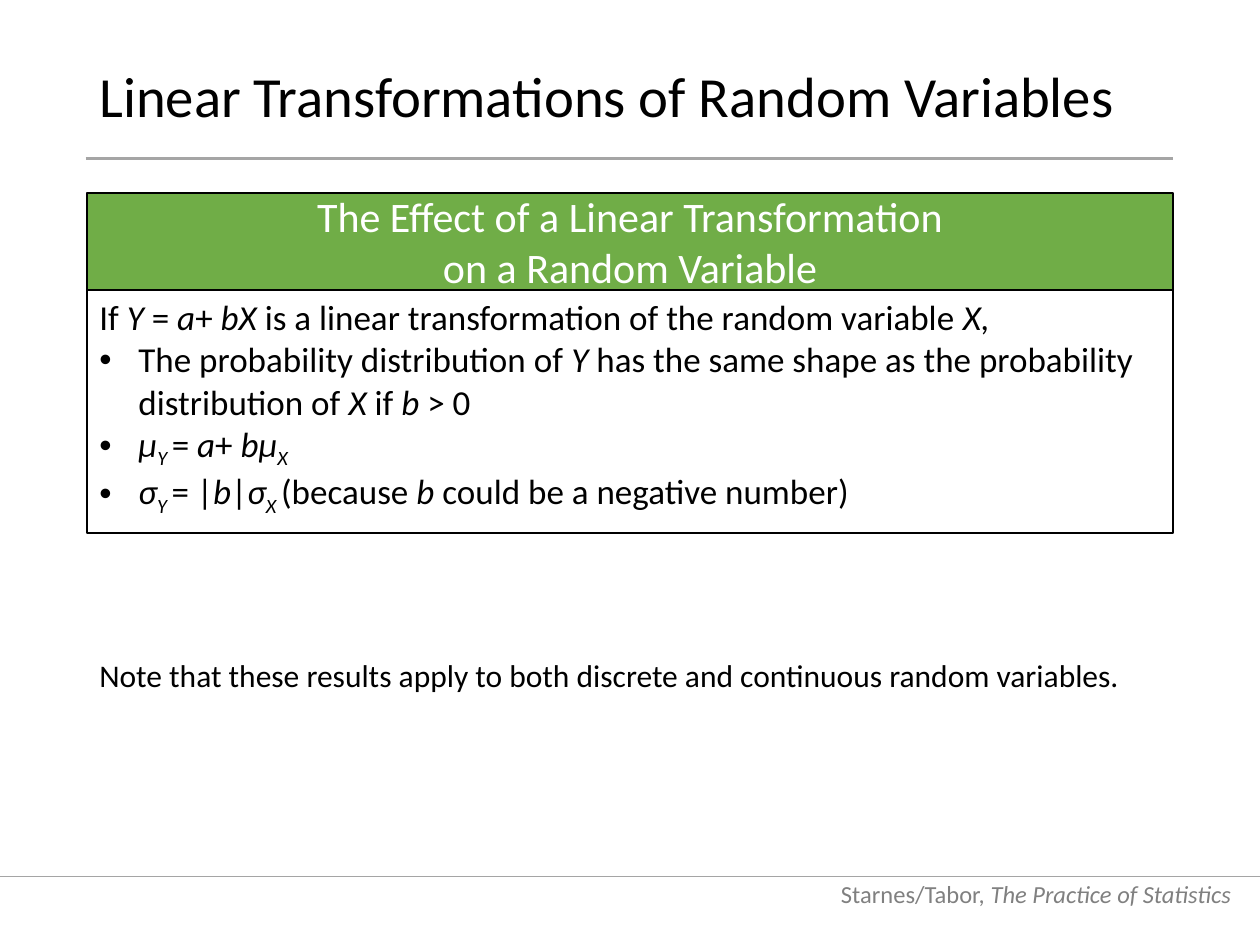
from lxml import etree
from pptx import Presentation
from pptx.dml.color import RGBColor
from pptx.enum.shapes import MSO_CONNECTOR as Connector, MSO_SHAPE as Shape
from pptx.enum.text import MSO_ANCHOR as Anchor, PP_ALIGN as Align
from pptx.oxml.ns import qn
from pptx.util import Inches, Pt

LEFT, WIDTH = 0.69, 8.62
BLACK, WHITE, GREEN, GRAY, RULE = "000000", "FFFFFF", "70AD47", "808080", "A5A5A5"
BULLET_INDENT = 0.31

ROMAN = {"italic": False}
ITALIC = {"italic": True}
SUBSCRIPT = {"italic": True, "baseline": -25000}

THEOREM_HEADING = [
    [("The Effect of a Linear Transformation", ROMAN)],
    [("on a Random Variable", ROMAN)],
]
PREMISE = [
    ("If ", ROMAN), ("Y ", ITALIC), ("= ", ROMAN), ("a", ITALIC), ("+ ", ROMAN),
    ("bX ", ITALIC), ("is a linear transformation of the random variable ", ROMAN),
    ("X,", ITALIC),
]
CONCLUSIONS = [
    [("The probability distribution of ", ROMAN), ("Y ", ITALIC),
     ("has the same shape as the probability distribution of ", ROMAN),
     ("X ", ITALIC), ("if ", ROMAN), ("b ", ITALIC), ("> 0", ROMAN)],
    [("μ", ITALIC), ("Y ", SUBSCRIPT), ("= ", ROMAN), ("a", ITALIC), ("+ ", ROMAN),
     ("bμ", ITALIC), ("X", SUBSCRIPT)],
    [("σ", ITALIC), ("Y ", SUBSCRIPT), ("= |", ROMAN), ("b", ITALIC), ("|", ROMAN),
     ("σ", ITALIC), ("X ", SUBSCRIPT), ("(because ", ROMAN), ("b ", ITALIC),
     ("could be a negative number)", ROMAN)],
]


def rgb(color):
    """Turn a hex string into a colour."""
    return RGBColor.from_string(color)


def add_bullet(paragraph):
    """Give a paragraph a hanging bullet."""
    properties = paragraph._p.get_or_add_pPr()
    indent = Inches(BULLET_INDENT)
    for name, value in {"marL": indent, "indent": -indent}.items():
        properties.set(name, str(value))
    font = etree.SubElement(properties, qn("a:buFont"))
    font.set("typeface", "Arial")
    etree.SubElement(properties, qn("a:buChar")).set("char", "•")


def write(frame, paragraphs, size, color, anchor=Anchor.TOP, align=Align.LEFT,
          spacing=None, bullets_from=None):
    """Fill a text frame with paragraphs of styled runs."""
    for name, value in {"word_wrap": True, "vertical_anchor": anchor}.items():
        setattr(frame, name, value)
    for index, pieces in enumerate(paragraphs):
        paragraph = frame.add_paragraph() if index else frame.paragraphs[0]
        paragraph.alignment = align
        if spacing:
            paragraph.line_spacing = spacing
        if bullets_from is not None and index >= bullets_from:
            add_bullet(paragraph)
        for text, style in pieces:
            run = paragraph.add_run()
            run.text = text
            look = {"name": "Calibri", "size": Pt(size), "italic": style["italic"]}
            for name, value in look.items():
                setattr(run.font, name, value)
            run.font.color.rgb = rgb(color)
            if "baseline" in style:
                run._r.get_or_add_rPr().set("baseline", str(style["baseline"]))


def add_text(slide, box, paragraphs, size, color, **layout):
    """Add a text box."""
    label = slide.shapes.add_textbox(*map(Inches, box))
    write(label.text_frame, paragraphs, size, color, **layout)


def add_panel(group, top, height, fill, border, paragraphs, size, color, **layout):
    """Add one outlined rectangle of the theorem box."""
    panel = group.shapes.add_shape(
        Shape.RECTANGLE, *map(Inches, (LEFT, top, WIDTH, height)))
    panel.shadow.inherit = False
    if fill:
        panel.fill.solid()
        panel.fill.fore_color.rgb = rgb(fill)
    else:
        panel.fill.background()
    panel.line.color.rgb = rgb(BLACK)
    panel.line.width = Pt(border)
    write(panel.text_frame, paragraphs, size, color, **layout)


def add_rule(slide, start, end, y, width):
    """Add a horizontal gray rule."""
    rule = slide.shapes.add_connector(
        Connector.STRAIGHT, *map(Inches, (start, y, end, y)))
    rule.line.color.rgb = rgb(RULE)
    rule.line.width = Pt(width)
    etree.SubElement(rule._element.spPr, qn("a:effectLst"))


def main():
    """Build the slide and save it."""
    deck = Presentation()
    deck.slide_width, deck.slide_height = Inches(10), Inches(7.5)
    slide = deck.slides.add_slide(deck.slide_layouts[6])

    add_text(slide, (6.47, 6.86, 3.4, 0.4),
             [[("Starnes/Tabor,", ROMAN), (" The Practice of Statistics", ITALIC)]],
             14, GRAY, anchor=Anchor.BOTTOM, align=Align.RIGHT)
    add_rule(slide, 0, 10, 6.96, 0.5)
    add_rule(slide, 0.68, 9.31, 1.26, 1.5)
    add_text(slide, (LEFT, 0.4, WIDTH, 0.78),
             [[("Linear Transformations of Random Variables", ROMAN)]],
             32.4, BLACK, anchor=Anchor.MIDDLE, spacing=0.9)

    theorem = slide.shapes.add_group_shape()
    add_panel(theorem, 1.53, 0.77, GREEN, 1, THEOREM_HEADING, 24, WHITE,
              anchor=Anchor.MIDDLE, align=Align.CENTER)
    add_panel(theorem, 2.3, 1.93, None, 0.75, [PREMISE, *CONCLUSIONS], 20, BLACK,
              bullets_from=1)

    note = ("Note that these results apply to both discrete "
            "and continuous random variables.")
    add_text(slide, (LEFT, 5.16, WIDTH, 0.4), [[(note, ROMAN)]], 18, BLACK)
    deck.save("out.pptx")


if __name__ == "__main__":
    main()
